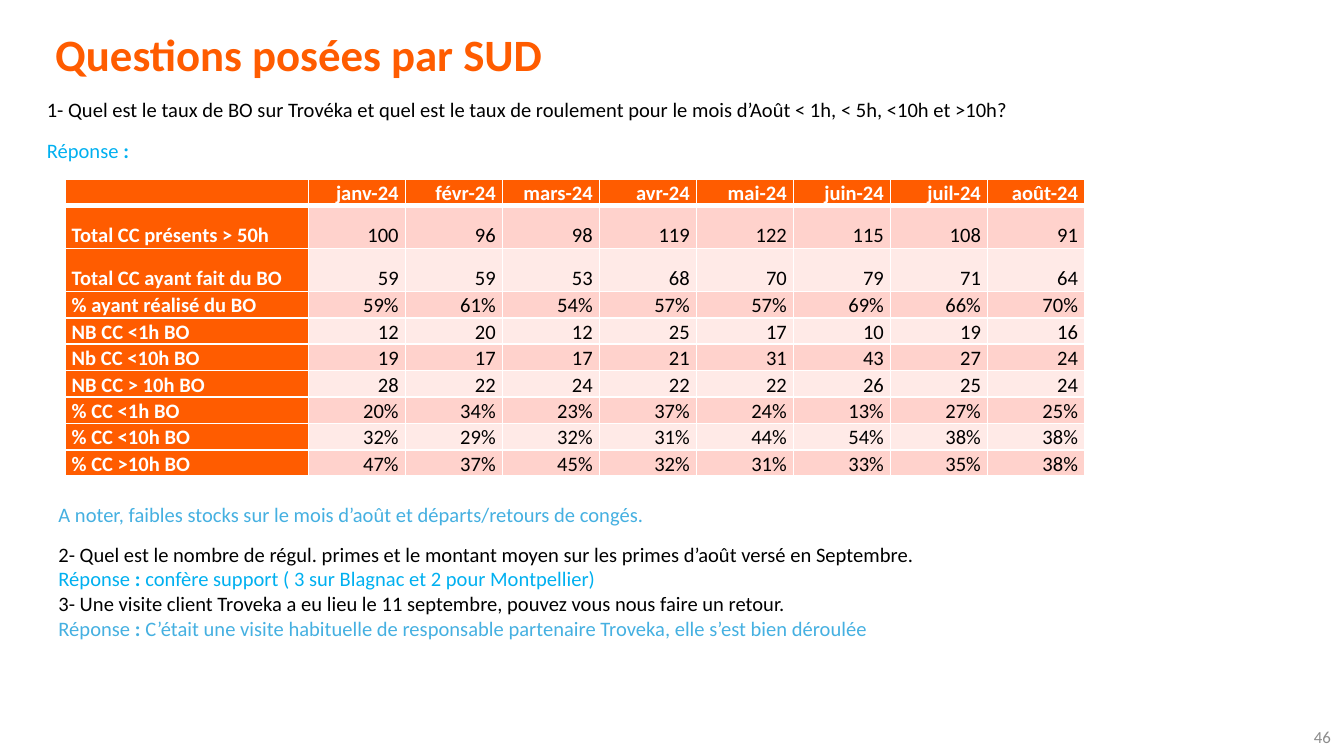
from pptx import Presentation
from pptx.dml.color import RGBColor
from pptx.enum.text import MSO_ANCHOR, PP_ALIGN
from pptx.oxml import parse_xml
from pptx.oxml.ns import nsdecls
from pptx.util import Pt

FONT = "Calibri"
ORANGE = RGBColor(0xFF, 0x5C, 0x00)
ROSE = RGBColor(0xFF, 0xD2, 0xCC)
PALE = RGBColor(0xFF, 0xEA, 0xE7)
CYAN = RGBColor(0x00, 0xB0, 0xF0)
SKY = RGBColor(0x45, 0xB0, 0xE1)
GREY = RGBColor(0x8C, 0x8C, 0x8C)
BLACK = RGBColor(0x00, 0x00, 0x00)
WHITE = RGBColor(0xFF, 0xFF, 0xFF)

MONTHS = ["", "janv-24", "févr-24", "mars-24", "avr-24",
          "mai-24", "juin-24", "juil-24", "août-24"]
ROWS = [
    ("Total CC présents > 50h", "100 96 98 119 122 115 108 91"),
    ("Total CC ayant fait du BO", "59 59 53 68 70 79 71 64"),
    ("% ayant réalisé du BO", "59% 61% 54% 57% 57% 69% 66% 70%"),
    ("NB CC <1h BO", "12 20 12 25 17 10 19 16"),
    ("Nb CC <10h BO", "19 17 17 21 31 43 27 24"),
    ("NB CC > 10h BO", "28 22 24 22 22 26 25 24"),
    ("% CC <1h BO", "20% 34% 23% 37% 24% 13% 27% 25%"),
    ("% CC <10h BO", "32% 29% 32% 31% 44% 54% 38% 38%"),
    ("% CC >10h BO", "47% 37% 45% 32% 31% 33% 35% 38%"),
]


def style(run, size, color, bold=False):
    font = run.font
    font.name, font.size, font.bold = FONT, Pt(size), bold
    font.color.rgb = color


def add_text(slide, box, lines, size=11, bold=False, anchor=MSO_ANCHOR.TOP):
    """Each line: (color, parts, line spacing, space after); odd parts are bold."""
    frame = slide.shapes.add_textbox(*map(Pt, box)).text_frame
    frame.word_wrap = True
    frame.vertical_anchor = anchor
    for i, (color, parts, pitch, after) in enumerate(lines):
        para = frame.paragraphs[0] if i == 0 else frame.add_paragraph()
        para.line_spacing, para.space_after = pitch, Pt(after)
        for j, part in enumerate(parts):
            run = para.add_run()
            run.text = part
            style(run, size, color, bold or j % 2 == 1)
    return frame


def add_title(slide, box):
    add_text(slide, box, [(ORANGE, ["Questions posées par SUD"], 0.9, 0)],
             24, True, MSO_ANCHOR.MIDDLE)


def add_first(slide, box):
    ask = ("1- Quel est le taux de BO sur Trovéka et quel est le taux de roulement "
           "pour le mois d’Août < 1h, < 5h, <10h et >10h?")
    add_text(slide, box, [(BLACK, [ask], 1.07, 8),
                          (CYAN, ["Réponse ", ":"], 1.07, 8)])


def add_others(slide, box):
    add_text(slide, box, [
        (SKY, ["A noter, faibles stocks sur le mois d’août et départs/retours "
               "de congés."], 1.07, 8),
        (BLACK, ["2- Quel est le nombre de régul. primes et le montant moyen sur "
                 "les primes d’août versé en Septembre."], 1, 0),
        (CYAN, ["Réponse ", ": ",
                "confère support ( 3 sur Blagnac et 2 pour Montpellier)"], 1, 0),
        (BLACK, ["3- Une visite client Troveka a eu lieu le 11 septembre, pouvez "
                 "vous nous faire un retour."], 1, 0),
        (SKY, ["Réponse ", ": ", "C’était une visite habituelle de responsable "
               "partenaire Troveka, elle s’est bien déroulée"], 1, 0),
    ])


def add_border(cell, side, width):
    cell._tc.get_or_add_tcPr().append(parse_xml(
        f'<a:{side} {nsdecls("a")} w="{Pt(width)}"><a:solidFill>'
        f'<a:srgbClr val="{WHITE}"/></a:solidFill></a:{side}>'))


def fill_cell(cell, text, row, col):
    head = row == 0 or col == 0
    cell.margin_left = cell.margin_right = Pt(3.6)
    cell.margin_top = cell.margin_bottom = 0
    cell.vertical_anchor = MSO_ANCHOR.BOTTOM
    # Thick rule under the header row
    for side in ("lnL", "lnR", "lnT", "lnB"):
        thick = (row, side) in ((0, "lnB"), (1, "lnT"))
        add_border(cell, side, 3 if thick else 1)
    cell.fill.solid()
    cell.fill.fore_color.rgb = ORANGE if head else ROSE if row % 2 else PALE
    cell.text_frame.text = text
    para = cell.text_frame.paragraphs[0]
    para.alignment = PP_ALIGN.RIGHT if col else PP_ALIGN.LEFT
    para.line_spacing = 1.07
    for run in para.runs:
        style(run, 11, WHITE if head else BLACK, head)
    if not text:
        # Keeps the empty corner as low as its row
        para._p.get_or_add_endParaRPr().set("sz", "1100")


def add_grid(slide, box):
    data = [MONTHS] + [[name] + nums.split() for name, nums in ROWS]
    table = slide.shapes.add_table(len(data), len(MONTHS), *map(Pt, box)).table
    first = 130.4
    rest = (box[2] - first) / (len(MONTHS) - 1)
    for i, col in enumerate(table.columns):
        col.width = Pt(rest if i else first)
    for r, line in enumerate(data):
        table.rows[r].height = Pt(23 if r in (1, 2) else 14)
        for c, text in enumerate(line):
            fill_cell(table.cell(r, c), text, r, c)


def add_number(slide, box):
    frame = add_text(slide, box, [(GREY, ["46"], 1, 0)], 9,
                     anchor=MSO_ANCHOR.MIDDLE)
    frame.paragraphs[0].alignment = PP_ALIGN.RIGHT


def main():
    deck = Presentation()
    deck.slide_width, deck.slide_height = Pt(720), Pt(405)
    slide = deck.slides.add_slide(deck.slide_layouts[6])
    add_number(slide, (558, 384, 162, 21))
    add_title(slide, (22.5, 16, 397, 29.5))
    add_first(slide, (18, 47.5, 684, 43))
    add_grid(slide, (34.8, 96, 546.4, 158))
    add_others(slide, (24.2, 264.5, 567, 83))
    deck.save("out.pptx")


if __name__ == "__main__":
    main()
